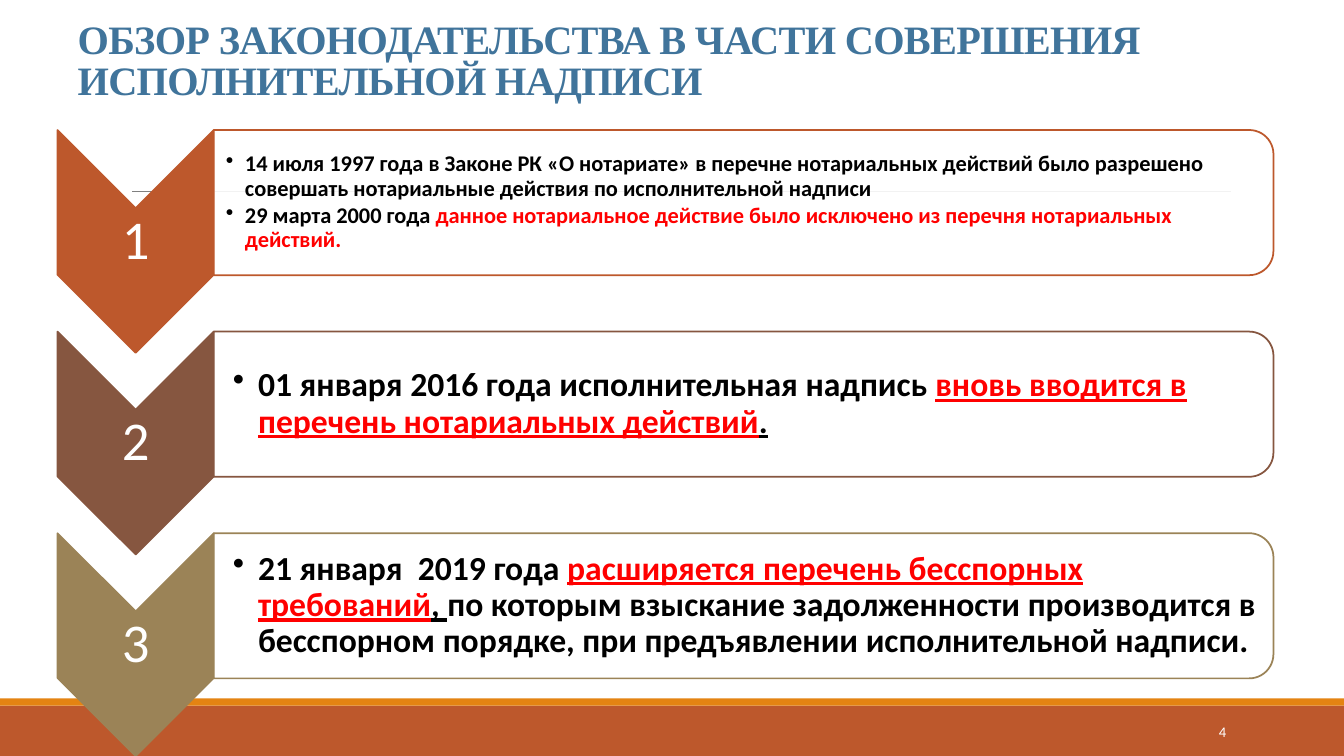
from lxml import etree
from pptx import Presentation
from pptx.dml.color import RGBColor
from pptx.enum.shapes import MSO_CONNECTOR, MSO_SHAPE
from pptx.enum.text import MSO_ANCHOR, MSO_AUTO_SIZE, PP_ALIGN
from pptx.oxml.ns import qn
from pptx.util import Inches, Pt

COLORS = {
    "title": "40749B", "rust": "BD582C", "orange": "E48312", "brown": "865640",
    "khaki": "9B8357", "gray": "808080", "white": "FFFFFF", "black": "000000", "red": "FF0000",
}
TITLE = "ОБЗОР ЗАКОНОДАТЕЛЬСТВА В ЧАСТИ СОВЕРШЕНИЯ ИСПОЛНИТЕЛЬНОЙ НАДПИСИ"

# Each stage: color, font size, left inset, bullet indent, paragraphs of (text, color, underline)
STAGES = [
    ("rust", 16, 0.12, 0.19, [
        [("14 июля 1997 года в Законе РК «О нотариате» в перечне нотариальных действий "
          "было разрешено совершать нотариальные действия по исполнительной надписи", "black", False)],
        [("29 марта 2000 года ", "black", False),
         ("данное нотариальное действие было исключено из перечня нотариальных действий.", "red", False)],
    ]),
    ("brown", 24, 0.19, 0.25, [
        [("01 января 2016 года исполнительная надпись ", "black", False),
         ("вновь вводится в перечень нотариальных действий", "red", True),
         (".", "black", True)],
    ]),
    ("khaki", 24, 0.19, 0.25, [
        [("21 января  2019 года ", "black", False),
         ("расширяется перечень бесспорных требований", "red", True),
         (", ", "black", True),
         ("по которым взыскание задолженности производится в бесспорном порядке, "
          "при предъявлении исполнительной надписи.", "black", False)],
    ]),
]


def rgb(name):
    return RGBColor.from_string(COLORS[name])


def add_filled(slide, kind, left, top, width, height, fill, line=None):
    shape = slide.shapes.add_shape(kind, Inches(left), Inches(top), Inches(width), Inches(height))
    shape.shadow.inherit = False
    shape.fill.solid()
    shape.fill.fore_color.rgb = rgb(fill)
    if line:
        shape.line.color.rgb = rgb(line)
        shape.line.width = Pt(1.25)
    else:
        shape.line.fill.background()
    return shape


def add_turned(slide, kind, left, top, width, height, fill, line):
    """Place a shape turned by 90 degrees so that it covers the given box."""
    shift = (width - height) / 2
    shape = add_filled(slide, kind, left + shift, top - shift, height, width, fill, line)
    shape.rotation = 90
    return shape


def add_text_frame(slide, left, top, width, height, inset, left_inset=None):
    box = slide.shapes.add_textbox(Inches(left), Inches(top), Inches(width), Inches(height))
    frame = box.text_frame
    frame.word_wrap = True
    frame.vertical_anchor = MSO_ANCHOR.MIDDLE
    frame.margin_left = Inches(inset if left_inset is None else left_inset)
    frame.margin_right = frame.margin_top = frame.margin_bottom = Inches(inset)
    return frame


def set_font(paragraph, size, color, name="Calibri", bold=False):
    font = paragraph.font
    font.name, font.size, font.bold = name, Pt(size), bold
    font.color.rgb = rgb(color)


def add_label(frame, text, size, align):
    paragraph = frame.paragraphs[0]
    paragraph.text = text
    paragraph.alignment = align
    set_font(paragraph, size, "white")


def add_bullet(paragraph, indent):
    properties = paragraph._p.get_or_add_pPr()
    properties.set("marL", str(Inches(indent)))
    properties.set("indent", str(-Inches(indent)))
    bullet = etree.Element(qn("a:buChar"), char="•")
    properties.find(qn("a:defRPr")).addprevious(bullet)


def add_title(slide, left, top, width, height):
    title = slide.shapes.title
    title.left, title.top = Inches(left), Inches(top)
    title.width, title.height = Inches(width), Inches(height)
    frame = title.text_frame
    frame.text = TITLE
    frame.auto_size = MSO_AUTO_SIZE.NONE
    frame.vertical_anchor = MSO_ANCHOR.BOTTOM
    paragraph = frame.paragraphs[0]
    paragraph.alignment = PP_ALIGN.LEFT
    paragraph.line_spacing = 0.85
    set_font(paragraph, 28.8, "title", "Times New Roman", True)
    paragraph.runs[0].font._element.set("spc", "-50")


def add_rule(slide, left, top, width):
    rule = slide.shapes.add_connector(
        MSO_CONNECTOR.STRAIGHT, Inches(left), Inches(top), Inches(left + width), Inches(top))
    rule.line.color.rgb = rgb("gray")
    rule.line.width = Pt(0.5)
    etree.SubElement(rule._element.spPr, qn("a:effectLst"))


def add_footer(slide, left, top, width, height):
    stripe = 0.07
    add_filled(slide, MSO_SHAPE.RECTANGLE, left, top + stripe, width, height - stripe, "rust")
    add_filled(slide, MSO_SHAPE.RECTANGLE, left, top, width, stripe, "orange")
    frame = add_text_frame(slide, left + 10.83, top + 0.13, 1.43, 0.4, 0.05, 0.1)
    frame.margin_right = Inches(0.1)
    add_label(frame, "4", 10.5, PP_ALIGN.RIGHT)


def add_stage(slide, left, top, width, number, stage):
    color, size, left_inset, indent, paragraphs = stage
    arrow_width, arrow_height, panel_height = 1.55, 2.21, 1.44
    panel_left, panel_width = left + arrow_width, width - arrow_width

    # Numbered chevron
    add_turned(slide, MSO_SHAPE.CHEVRON, left, top, arrow_width, arrow_height, color, color)
    frame = add_text_frame(slide, left, top + arrow_width / 2, arrow_width,
                           arrow_height - arrow_width, 0.03)
    add_label(frame, str(number), 39, PP_ALIGN.CENTER)
    frame.paragraphs[0].line_spacing = 0.9

    # Panel, slightly transparent
    panel = add_turned(slide, MSO_SHAPE.ROUND_2_SAME_RECTANGLE, panel_left, top,
                       panel_width, panel_height, "white", color)
    fill_color = panel._element.spPr.find(qn("a:solidFill"))[0]
    etree.SubElement(fill_color, qn("a:alpha"), val="90000")

    # Bulleted text
    frame = add_text_frame(slide, panel_left, top + 0.07, panel_width - 0.07,
                           panel_height - 0.14, 0.02, left_inset)
    for index, parts in enumerate(paragraphs):
        paragraph = frame.add_paragraph() if index else frame.paragraphs[0]
        paragraph.line_spacing = 0.9
        paragraph.space_after = Pt(size * 0.15)
        set_font(paragraph, size, "black", bold=True)
        add_bullet(paragraph, indent)
        for text, text_color, underline in parts:
            run = paragraph.add_run()
            run.text = text
            run.font.color.rgb = rgb(text_color)
            run.font.underline = underline


def main():
    presentation = Presentation()
    presentation.slide_width = Inches(13.33)
    presentation.slide_height = Inches(7.5)
    slide = presentation.slides.add_slide(presentation.slide_layouts[5])
    add_title(slide, 0.67, 0.3, 12, 0.78)
    add_footer(slide, 0, 6.93, 13.33, 0.57)
    add_rule(slide, 1.31, 1.9, 10.9)
    for index, stage in enumerate(STAGES):
        add_stage(slide, 0.57, 1.29 + 2 * index, 12.06, index + 1, stage)
    presentation.save("out.pptx")


if __name__ == "__main__":
    main()
